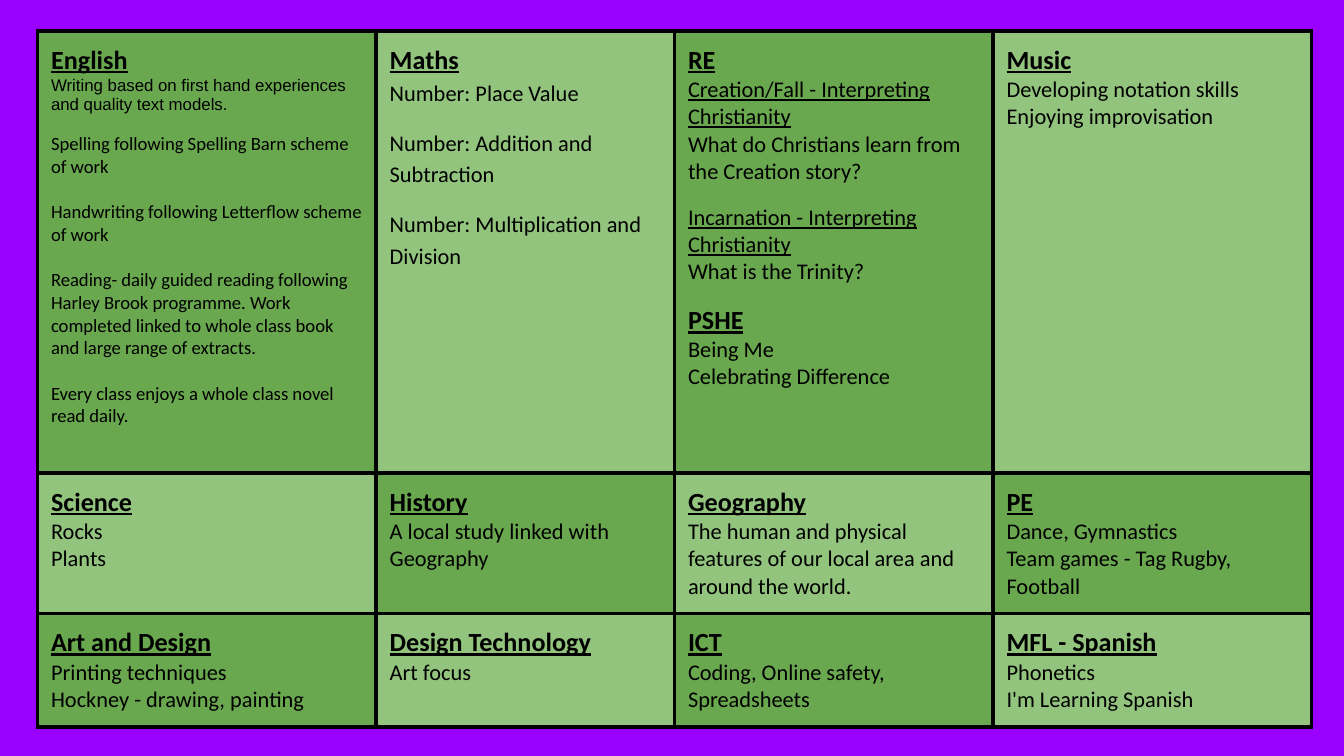
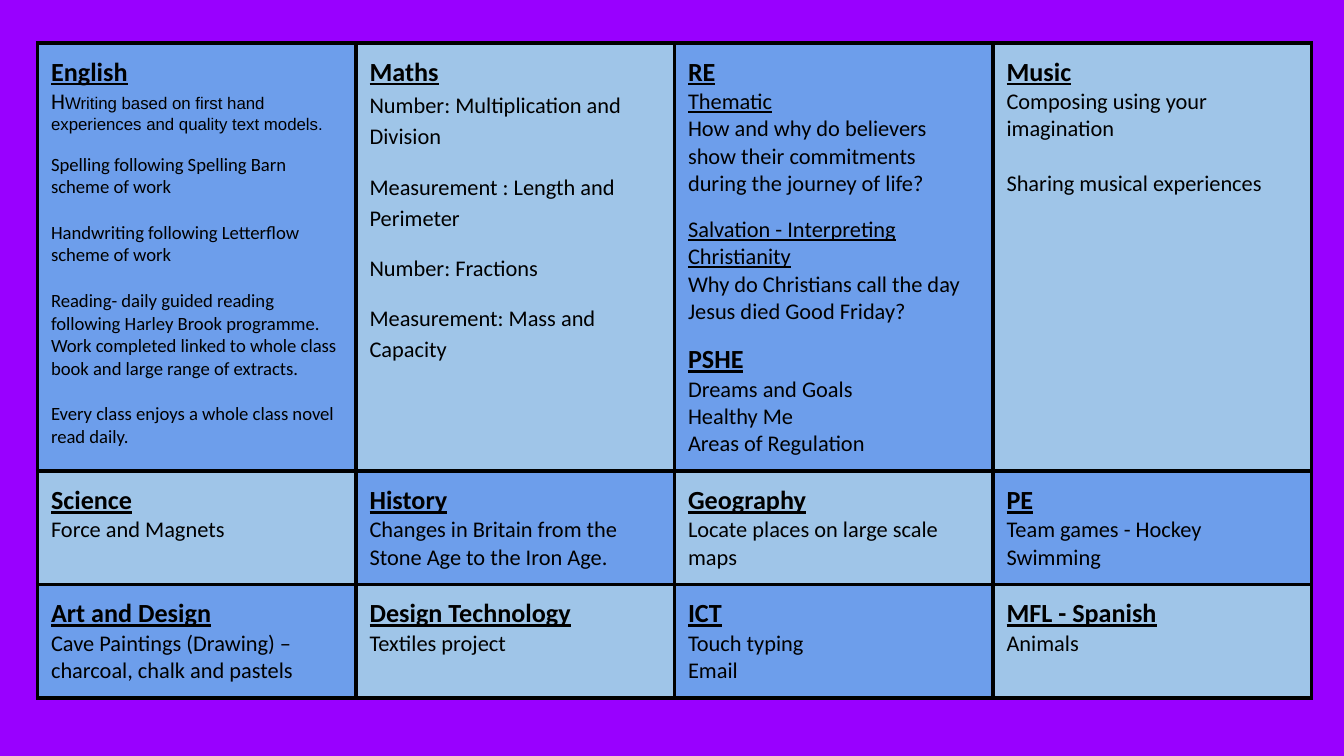
from lxml import etree
from pptx import Presentation
from pptx.dml.color import RGBColor
from pptx.oxml.ns import qn
from pptx.util import Inches, Pt

BACKGROUND = "9900FF"
INK = "000000"
BORDER_PT = 2.25
MARGIN = 0.1
LEFT = 0.28

STYLES = {
    "heading": dict(size=14, bold=True, underline=True),
    "section": dict(size=14, bold=True, underline=True, before=10),
    "body": dict(size=12),
    "gap": dict(size=12, before=14.65),
    "topic": dict(size=12, underline=True),
    "next topic": dict(size=12, underline=True, before=10),
    "unit": dict(size=12, spacing=1.15),
    "next unit": dict(size=12, spacing=1.15, before=10),
    "intro": dict(size=9, font="Arial"),
    "scheme": dict(size=10, before=10.3),
    "next scheme": dict(size=10, before=12.2),
}

WRITING = "Writing based on first hand experiences and quality text models."
ENGLISH = [
    ("scheme", "Spelling following Spelling Barn scheme of work"),
    ("next scheme", "Handwriting following Letterflow scheme of work"),
    ("next scheme", "Reading- daily guided reading following Harley Brook programme. "
                    "Work completed linked to whole class book and large range of extracts."),
    ("next scheme", "Every class enjoys a whole class novel read daily."),
]

SUBJECTS = [
    ["English", "Maths", "RE", "Music"],
    ["Science", "History", "Geography", "PE"],
    ["Art and Design", "Design Technology", "ICT", "MFL - Spanish"],
]

TERMS = [
    dict(
        top=0.23, cols=[2.52, 2.22, 2.37, 2.37], rows=[3.29, 0.83, 0.83],
        fills=("6AA84F", "93C47D"),
        cells=[
            [
                [("intro", WRITING)] + ENGLISH,
                [("unit", "Number: Place Value"),
                 ("next unit", "Number: Addition and Subtraction"),
                 ("next unit", "Number: Multiplication and Division")],
                [("topic", "Creation/Fall - Interpreting Christianity"),
                 ("body", "What do Christians learn from the Creation story?"),
                 ("next topic", "Incarnation - Interpreting Christianity"),
                 ("body", "What is the Trinity?"),
                 ("section", "PSHE"),
                 ("body", "Being Me"),
                 ("body", "Celebrating Difference")],
                [("body", "Developing notation skills"),
                 ("body", "Enjoying improvisation")],
            ],
            [
                [("body", "Rocks"), ("body", "Plants")],
                [("body", "A local study linked with Geography")],
                [("body", "The human and physical features of our local area "
                          "and around the world.")],
                [("body", "Dance, Gymnastics"),
                 ("body", "Team games - Tag Rugby, Football")],
            ],
            [
                [("body", "Printing techniques"),
                 ("body", "Hockney - drawing, painting")],
                [("body", "Art focus")],
                [("body", "Coding, Online safety, Spreadsheets")],
                [("body", "Phonetics"), ("body", "I'm Learning Spanish")],
            ],
        ],
    ),
    dict(
        top=0.32, cols=[2.37] * 4, rows=[3.05, 0.83, 0.83],
        fills=("6D9EEB", "9FC5E8"),
        cells=[
            [
                [("body", "H", "intro", WRITING)] + ENGLISH,
                [("unit", "Number: Multiplication and Division"),
                 ("next unit", "Measurement : Length and Perimeter"),
                 ("next unit", "Number: Fractions"),
                 ("next unit", "Measurement: Mass and Capacity")],
                [("topic", "Thematic"),
                 ("body", "How and why do believers show their commitments "
                          "during the journey of life?"),
                 ("next topic", "Salvation - Interpreting Christianity"),
                 ("body", "Why do Christians call the day Jesus died Good Friday?"),
                 ("section", "PSHE"),
                 ("body", "Dreams and Goals"),
                 ("body", "Healthy Me"),
                 ("body", "Areas of Regulation")],
                [("body", "Composing using your imagination"),
                 ("gap", "Sharing musical experiences")],
            ],
            [
                [("body", "Force and Magnets")],
                [("body", "Changes in Britain from the Stone Age to the Iron Age.")],
                [("body", "Locate places on large scale maps")],
                [("body", "Team games - Hockey"), ("body", "Swimming")],
            ],
            [
                [("body", "Cave Paintings (Drawing) – charcoal, chalk and pastels")],
                [("body", "Textiles project")],
                [("body", "Touch typing"), ("body", "Email")],
                [("body", "Animals")],
            ],
        ],
    ),
]


def set_fill(fill, color):
    fill.solid()
    fill.fore_color.rgb = RGBColor.from_string(color)


def set_font(font, size, font_name="Calibri", bold=False, underline=False):
    font.size = Pt(size)
    font.name = font_name
    font.bold = bold
    font.underline = underline
    set_fill(font.fill, INK)


def set_borders(cell):
    tc_pr = cell._tc.get_or_add_tcPr()
    for side in ("lnL", "lnR", "lnT", "lnB"):
        ln = etree.SubElement(tc_pr, qn(f"a:{side}"), w=str(Pt(BORDER_PT)))
        solid = etree.SubElement(ln, qn("a:solidFill"))
        etree.SubElement(solid, qn("a:srgbClr"), val=INK)


def write_paragraph(p, parts):
    first = STYLES[parts[0]]
    p.space_before = Pt(first.get("before", 0))
    p.space_after = Pt(0)
    p.line_spacing = first.get("spacing", 1.0)
    for name, text in zip(parts[::2], parts[1::2]):
        style = STYLES[name]
        r = p.add_run()
        r.text = text
        font = p.font if len(parts) == 2 else r.font
        set_font(font, style["size"], style.get("font", "Calibri"),
                 style.get("bold", False), style.get("underline", False))


def write_cell(cell, paragraphs, color):
    cell.margin_left = cell.margin_right = Inches(MARGIN)
    cell.margin_top = cell.margin_bottom = Inches(MARGIN)
    set_borders(cell)
    set_fill(cell.fill, color)
    tf = cell.text_frame
    for i, parts in enumerate(paragraphs):
        p = tf.add_paragraph() if i else tf.paragraphs[0]
        write_paragraph(p, parts)


def add_term(prs, term):
    s = prs.slides.add_slide(prs.slide_layouts[6])
    set_fill(s.background.fill, BACKGROUND)
    cols, rows = term["cols"], term["rows"]
    table = s.shapes.add_table(
        len(rows), len(cols), Inches(LEFT), Inches(term["top"]),
        Inches(sum(cols)), Inches(sum(rows))).table
    table.first_row = False
    table.horz_banding = False
    for column, width in zip(table.columns, cols):
        column.width = Inches(width)
    for row, height in zip(table.rows, rows):
        row.height = Inches(height)
    for i, (subjects, contents) in enumerate(zip(SUBJECTS, term["cells"])):
        for j, (subject, content) in enumerate(zip(subjects, contents)):
            write_cell(table.cell(i, j), [("heading", subject)] + content,
                       term["fills"][(i + j) % 2])


def main():
    prs = Presentation()
    prs.slide_width = Inches(10)
    prs.slide_height = prs.slide_width * 9 // 16
    for term in TERMS:
        add_term(prs, term)
    prs.save("out.pptx")


if __name__ == "__main__":
    main()
